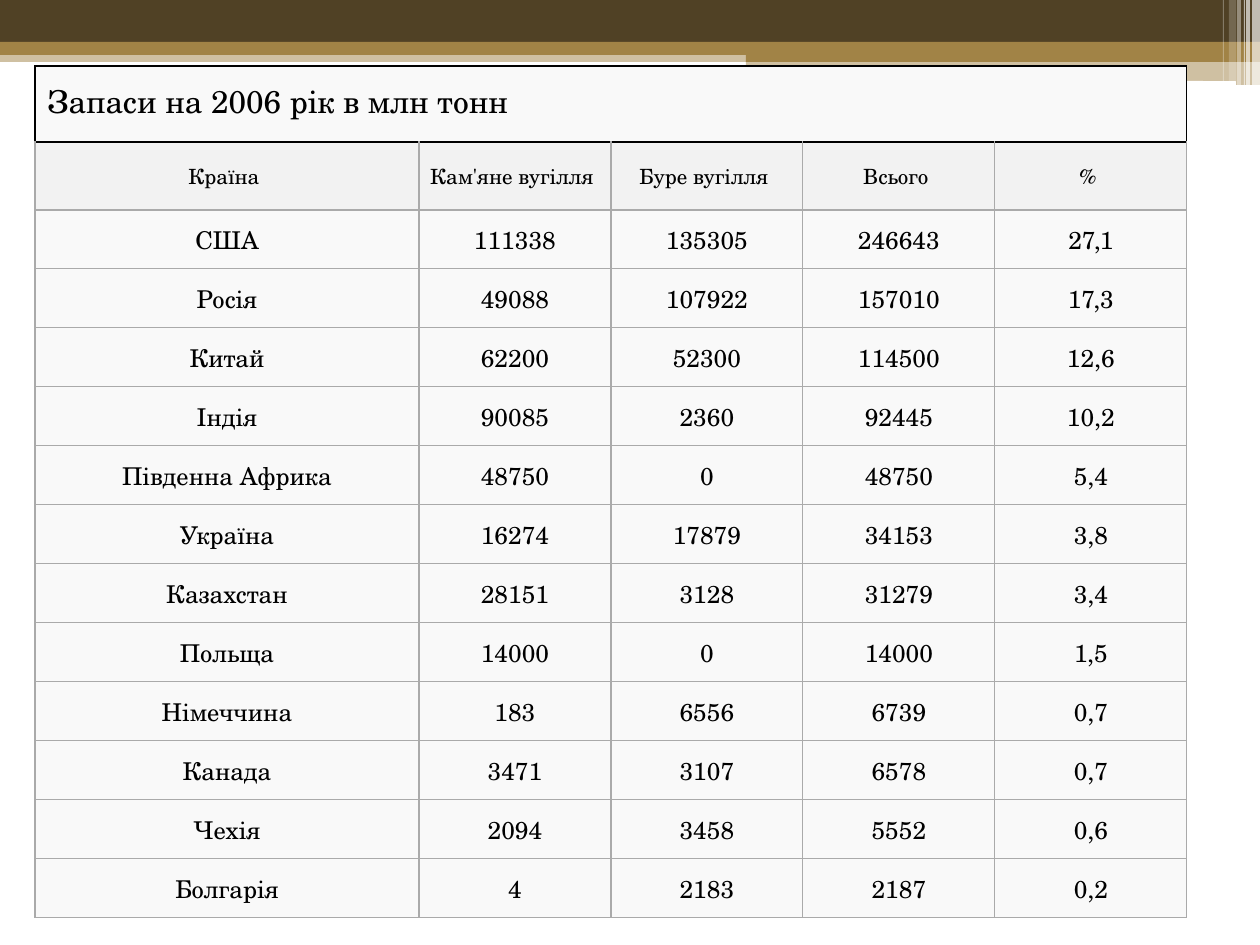
from lxml.etree import SubElement
from pptx import Presentation
from pptx.dml.color import RGBColor
from pptx.enum.shapes import MSO_SHAPE as Shape
from pptx.enum.text import MSO_ANCHOR as Anchor, PP_ALIGN as Align
from pptx.oxml.ns import qn
from pptx.util import Emu, Pt

FONT = "TeX Gyre Schola"
BLACK, WHITE, GOLD, BROWN = "000000", "FFFFFF", "A18346", "504125"
GRID, CELL, HEADER = "AAAAAA", "F9F9F9", "F2F2F2"


def px(length):
    return Emu(round(length * 914400 / 126))


def color(code):
    return RGBColor.from_string(code)


class Page:
    def __init__(self, deck):
        self.slide = deck.slides.add_slide(deck.slide_layouts[6])

    def band(self, left, top, width, height, fill, alpha=100, kind=Shape.RECTANGLE):
        shape = self.slide.shapes.add_shape(
            kind, px(left), px(top), px(width), px(height))
        shape.shadow.inherit = False
        shape.line.fill.background()
        shape.fill.solid()
        shape.fill.fore_color.rgb = color(fill)
        if alpha < 100:
            tint = shape._element.spPr.find(qn("a:solidFill"))[0]
            SubElement(tint, qn("a:alpha"), val=str(alpha * 1000))

    def fill_para(self, para, text, size, align):
        para.text = text
        para.alignment = align
        para.font.size = Pt(size)
        para.font.name = FONT
        para.font.color.rgb = color(BLACK)

    def text(self, left, top, width, height, text, size):
        box = self.slide.shapes.add_textbox(
            px(left), px(top), px(width), px(height))
        box.text_frame.word_wrap = True
        self.fill_para(box.text_frame.paragraphs[0], text, size, Align.LEFT)

    def table(self, left, top, widths, heights):
        frame = self.slide.shapes.add_table(
            len(heights), len(widths), px(left), px(top),
            px(sum(widths)), px(sum(heights)))
        table = frame.table
        table.first_row = table.horz_banding = False
        for column, width in zip(table.columns, widths):
            column.width = px(width)
        for row, height in zip(table.rows, heights):
            row.height = px(height)
        return table

    def cell(self, cell, fill, left=GRID, right=GRID, top=GRID, bottom=GRID):
        props = cell._tc.get_or_add_tcPr()
        for side, code in zip("LRTB", (left, right, top, bottom)):
            line = SubElement(props, qn(f"a:ln{side}"), w=str(Pt(0.75)))
            solid = SubElement(line, qn("a:solidFill"))
            SubElement(solid, qn("a:srgbClr"), val=code)
        cell.fill.solid()
        cell.fill.fore_color.rgb = color(fill)

    def cell_text(self, cell, text, size, right_margin):
        cell.vertical_anchor = Anchor.MIDDLE
        cell.margin_left, cell.margin_right = px(5), px(right_margin)
        cell.margin_top = cell.margin_bottom = px(3)
        self.fill_para(cell.text_frame.paragraphs[0], text, size, Align.CENTER)


COLUMNS = ["Країна", "Кам'яне вугілля", "Буре вугілля", "Всього", "%"]
RESERVES = [
    ("США", "111338", "135305", "246643", "27,1"),
    ("Росія", "49088", "107922", "157010", "17,3"),
    ("Китай", "62200", "52300", "114500", "12,6"),
    ("Індія", "90085", "2360", "92445", "10,2"),
    ("Південна Африка", "48750", "0", "48750", "5,4"),
    ("Україна", "16274", "17879", "34153", "3,8"),
    ("Казахстан", "28151", "3128", "31279", "3,4"),
    ("Польща", "14000", "0", "14000", "1,5"),
    ("Німеччина", "183", "6556", "6739", "0,7"),
    ("Канада", "3471", "3107", "6578", "0,7"),
    ("Чехія", "2094", "3458", "5552", "0,6"),
    ("Болгарія", "4", "2183", "2187", "0,2"),
]


def main():
    deck = Presentation()
    deck.slide_width, deck.slide_height = px(1260), px(945)
    page = Page(deck)

    # Bands across the top
    page.band(0, 50, 1260, 12, GOLD, 50)
    page.band(0, 0, 1260, 43, BROWN)
    page.band(0, 42, 1260, 13, GOLD)
    page.band(746, 49, 514, 13, GOLD)
    page.band(746, 61, 514, 24, GOLD, 50)
    for left, top, width, height in [(745, 68, 422, 4), (1016, 81, 220, 5)]:
        page.band(left, top, width, height, WHITE, kind=Shape.ROUNDED_RECTANGLE)

    # Pale stripes in the corner
    for left, width, height, alpha in [
            (1252, 8, 86, 65), (1246, 4, 86, 65), (1244, 1, 86, 60),
            (1237, 4, 86, 40), (1229, 7, 81, 20), (1223, 1, 81, 30)]:
        page.band(left, 0, width, height, WHITE, alpha)

    # Table: title row, header row, one row per country
    table = page.table(35, 66, [384] + [192] * 4,
                       [76, 68] + [59] * len(RESERVES))
    for cell in table.rows[0].cells:
        page.cell(cell, CELL, BLACK, BLACK, BLACK, BLACK)
    table.cell(0, 0).merge(table.cell(0, len(COLUMNS) - 1))
    for cell, label in zip(table.rows[1].cells, COLUMNS):
        page.cell(cell, HEADER, top=BLACK)
        page.cell_text(cell, label, 12, 11)
    for index, values in enumerate(RESERVES, start=2):
        for cell, value in zip(table.rows[index].cells, values):
            page.cell(cell, CELL)
            page.cell_text(cell, value, 14, 5)

    # Title over the empty first row
    page.text(35, 76, 764, 51, "Запаси на 2006 рік в млн тонн", 18)

    deck.save("out.pptx")


if __name__ == "__main__":
    main()
